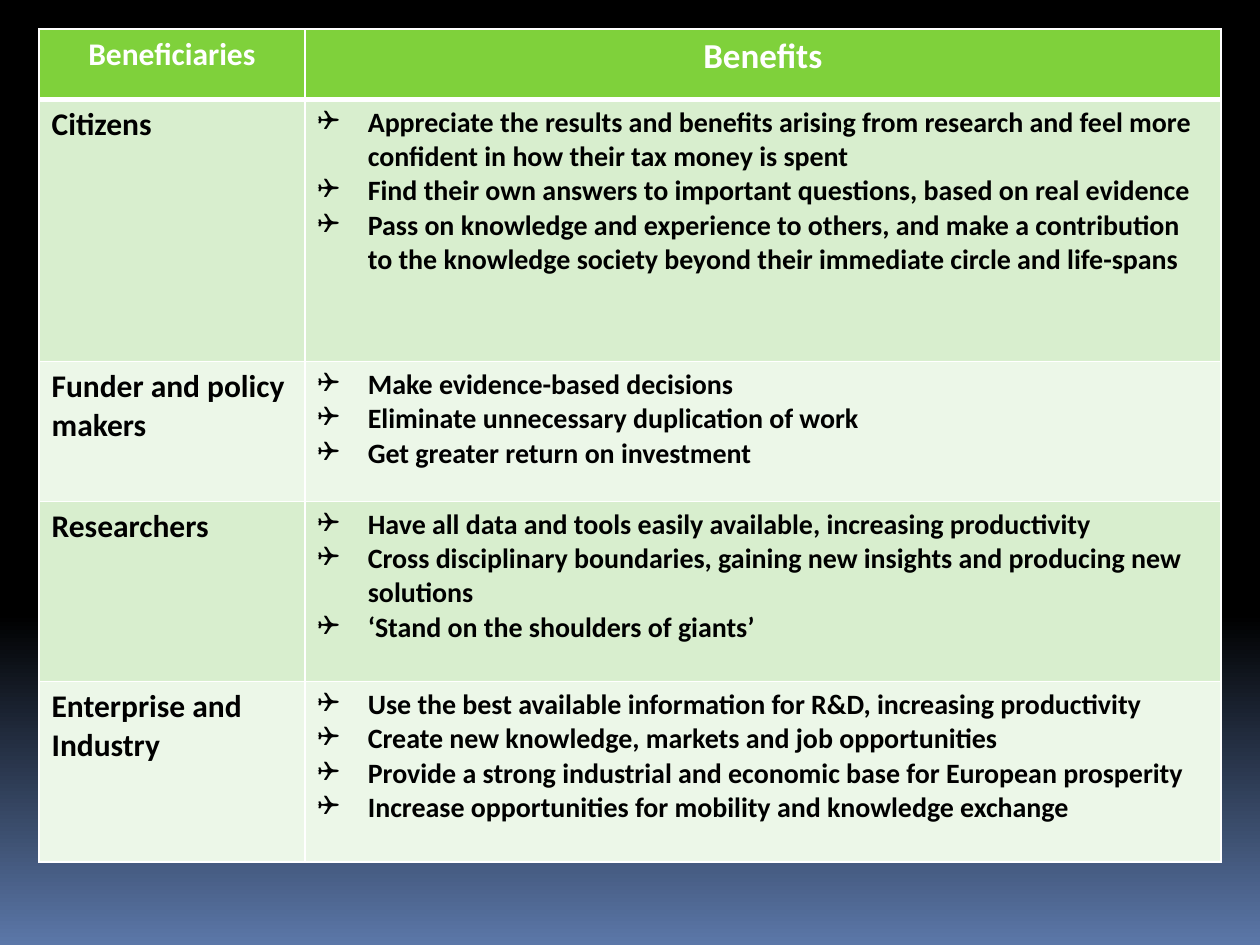
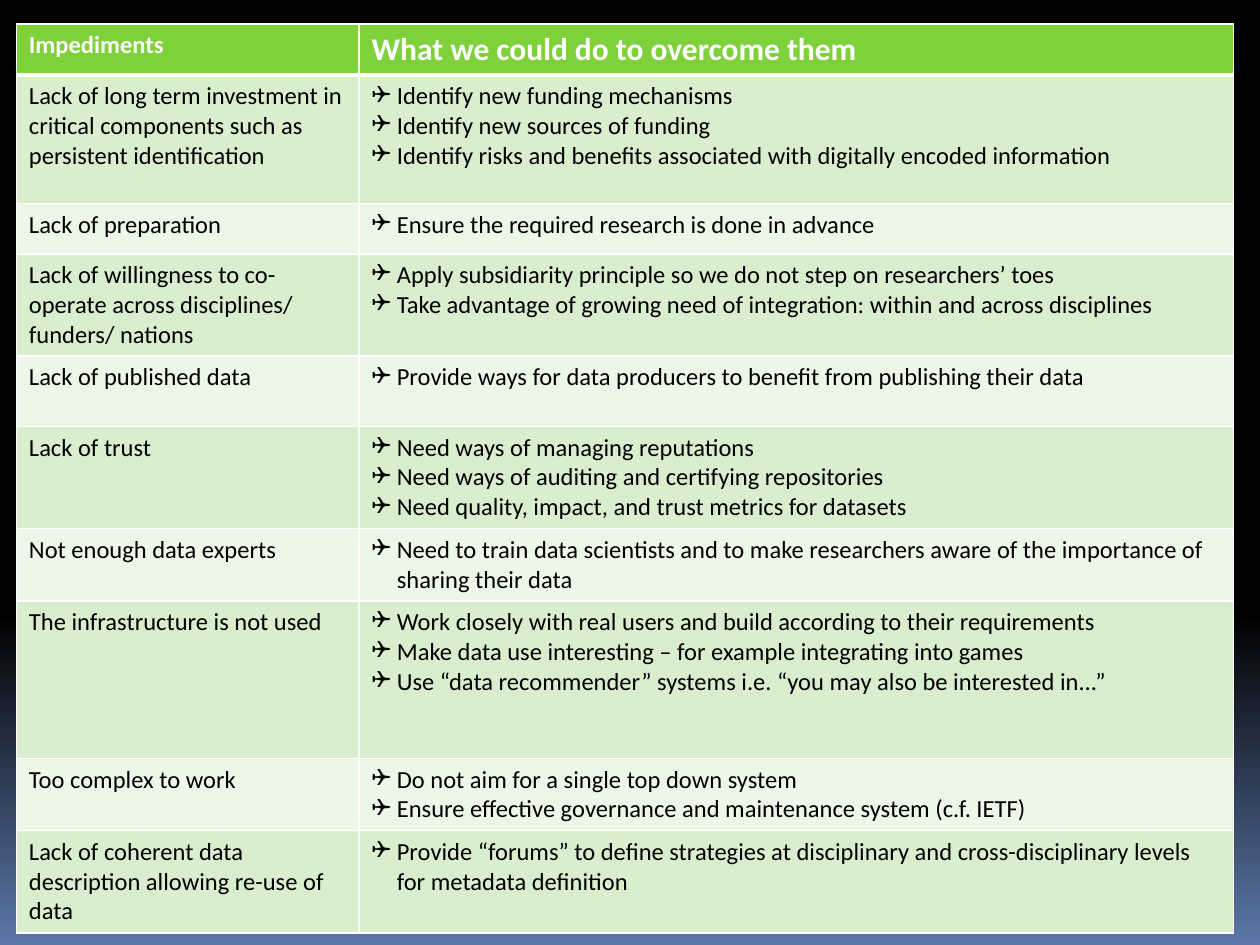
from copy import deepcopy

from lxml import etree
from pptx import Presentation
from pptx import util as u
from pptx.dml.color import RGBColor
from pptx.enum import text
from pptx.oxml.ns import qn

COLORS = {
    "black": "000000",
    "blue": "5B77A8",
    "header": "7FD13B",
    "odd_row": "D8EECE",
    "even_row": "ECF7E8",
    "white": "FFFFFF",
}
FONT = "Calibri"
BULLET = "❑"

BENEFITS = [
    ("Citizens", [
        "Appreciate the results and benefits arising from research and feel more "
        "confident in how their tax money is spent",
        "Find their own answers to important questions, based on real evidence",
        "Pass on knowledge and experience to others, and make a contribution to the "
        "knowledge society beyond their immediate circle and life-spans"]),
    ("Funder and policy makers", [
        "Make evidence-based decisions",
        "Eliminate unnecessary duplication of work",
        "Get greater return on investment"]),
    ("Researchers", [
        "Have all data and tools easily available, increasing productivity",
        "Cross disciplinary boundaries, gaining new insights and producing new solutions",
        "‘Stand on the shoulders of giants’"]),
    ("Enterprise and Industry", [
        "Use the best available information for R&D, increasing productivity",
        "Create new knowledge, markets and job opportunities",
        "Provide a strong industrial and economic base for European prosperity",
        "Increase opportunities for mobility and knowledge exchange"]),
]

IMPEDIMENTS = [
    ("Lack of long term investment in critical components such as persistent identification", [
        "Identify new funding mechanisms",
        "Identify new sources of funding",
        "Identify risks and benefits associated with digitally encoded information"]),
    ("Lack of preparation", [
        "Ensure the required research is done in advance"]),
    ("Lack of willingness to co-operate across disciplines/ funders/ nations", [
        "Apply subsidiarity principle so we do not step on researchers’ toes",
        "Take advantage of growing need of integration: within and across disciplines"]),
    ("Lack of published data", [
        "Provide ways for data producers to benefit from publishing their data"]),
    ("Lack of trust", [
        "Need ways of managing reputations",
        "Need ways of auditing and certifying repositories",
        "Need quality, impact, and trust metrics for datasets"]),
    ("Not enough data experts", [
        "Need to train data scientists and to make researchers aware of the importance of "
        "sharing their data"]),
    ("The infrastructure is not used", [
        "Work closely with real users and build according to their requirements",
        "Make data use interesting – for example integrating into games",
        "Use “data recommender” systems i.e. “you may also be interested in...”"]),
    ("Too complex to work", [
        "Do not aim for a single top down system",
        "Ensure effective governance and maintenance system (c.f. IETF)"]),
    ("Lack of coherent data description allowing re-use of data", [
        "Provide “forums” to define strategies at disciplinary and cross-disciplinary levels "
        "for metadata definition"]),
]


def rgb(name):
    return RGBColor.from_string(COLORS[name])


def set_background(master):
    """Black upper part fading to blue at the bottom, for every slide."""
    fill = master.background.fill
    fill.gradient()
    fill.gradient_angle = 270
    stop_list = master.element.find(".//" + qn("a:gsLst"))
    stop_list.append(deepcopy(stop_list[0]))
    for stop, (position, color) in zip(
            fill.gradient_stops, [(0, "black"), (0.65, "black"), (1, "blue")]):
        stop.position = position
        stop.color.rgb = rgb(color)


def set_borders(cell, bottom_width):
    properties = cell._tc.get_or_add_tcPr()
    widths = {"a:lnL": 1, "a:lnR": 1, "a:lnT": 1, "a:lnB": bottom_width}
    for index, (tag, width) in enumerate(widths.items()):
        line = etree.Element(qn(tag), w=str(u.Pt(width)))
        solid = etree.SubElement(line, qn("a:solidFill"))
        etree.SubElement(solid, qn("a:srgbClr"), val=COLORS["white"])
        properties.insert(index, line)


def add_bullet(paragraph, indent):
    properties = paragraph._p.get_or_add_pPr()
    properties.set("marL", str(u.Inches(indent)))
    properties.set("indent", str(-u.Inches(indent)))
    etree.SubElement(properties, qn("a:buFont"), typeface="Wingdings")
    etree.SubElement(properties, qn("a:buChar"), char=BULLET)


def fill_cell(cell, lines, size, fill, color="black", bold=True, indent=0,
              align=text.PP_ALIGN.LEFT, bottom_width=1):
    cell.fill.solid()
    cell.fill.fore_color.rgb = rgb(fill)
    set_borders(cell, bottom_width)
    frame = cell.text_frame
    for index, line in enumerate(lines):
        paragraph = frame.add_paragraph() if index else frame.paragraphs[0]
        paragraph.alignment = align
        if indent:
            add_bullet(paragraph, indent)
        run = paragraph.add_run()
        run.text = line
        run.font.name = FONT
        run.font.size = u.Pt(size)
        run.font.bold = bold
        run.font.color.rgb = rgb(color)


def add_table_slide(presentation, box, columns, heights, headings, heading_sizes,
                    heading_align, rows, sizes, bold, indent):
    """A slide with one two-column table: a topic and its bulleted points."""
    slide = presentation.slides.add_slide(presentation.slide_layouts[6])
    left, top = box
    table = slide.shapes.add_table(
        len(heights), len(columns), u.Inches(left), u.Inches(top),
        u.Inches(sum(columns)), u.Inches(sum(heights))).table
    for column, width in zip(table.columns, columns):
        column.width = u.Inches(width)
    for row, height in zip(table.rows, heights):
        row.height = u.Inches(height)

    # Header row
    for index, (heading, size) in enumerate(zip(headings, heading_sizes)):
        fill_cell(table.cell(0, index), [heading], size, "header", "white",
                  align=heading_align, bottom_width=3)

    # Body rows in alternating tints
    topic_size, point_size = sizes
    for index, (topic, points) in enumerate(rows, start=1):
        tint = "odd_row" if index % 2 else "even_row"
        fill_cell(table.cell(index, 0), [topic], topic_size, tint, bold=bold)
        fill_cell(table.cell(index, 1), points, point_size, tint, bold=bold, indent=indent)


def main():
    presentation = Presentation()
    presentation.slide_width = u.Inches(10)
    presentation.slide_height = u.Inches(7.5)
    set_background(presentation.slide_master)

    add_table_slide(
        presentation, box=(0.31, 0.23), columns=[2.11, 7.27],
        heights=[0.56, 2.08, 1.11, 1.43, 1.43],
        headings=["Beneficiaries", "Benefits"], heading_sizes=[18, 20],
        heading_align=text.PP_ALIGN.CENTER,
        rows=BENEFITS, sizes=(18, 16), bold=True, indent=0.4)
    add_table_slide(
        presentation, box=(0.13, 0.19), columns=[2.72, 6.94],
        heights=[0.4, 1.02, 0.4, 0.81, 0.56, 0.81, 0.57, 1.25, 0.57, 0.81],
        headings=["Impediments", "What we could do to overcome them"], heading_sizes=[14, 18],
        heading_align=text.PP_ALIGN.LEFT,
        rows=IMPEDIMENTS, sizes=(14, 14), bold=False, indent=0.2)

    presentation.save("out.pptx")


if __name__ == "__main__":
    main()
